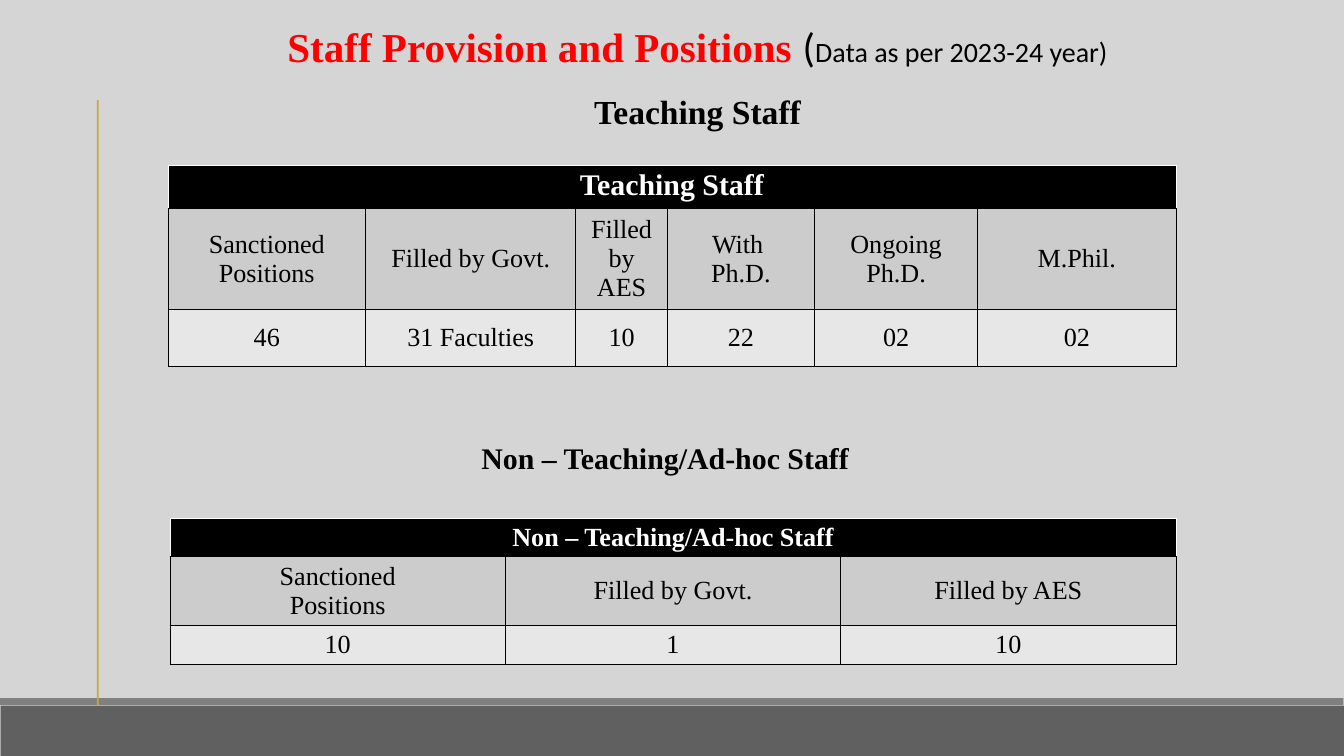
import pptx
import pptx.dml.color
import pptx.enum.shapes
import pptx.enum.text
import pptx.oxml
import pptx.oxml.ns
import pptx.util

Inches = pptx.util.Inches
Pt = pptx.util.Pt
ANCHOR = pptx.enum.text.MSO_ANCHOR

THEME = {
    "serif": "Times New Roman", "sans": "Calibri",
    "background": "D5D5D5", "floor": "606060", "floor_edge": "808080", "accent": "CDA63C",
    "title": "FF0000", "text": "000000", "inverse": "FFFFFF",
    "header": "000000", "label": "CCCCCC", "value": "E7E7E7",
    "title_size": 44, "note_size": 30, "heading_size": 36,
    "subheading_size": 32, "cell_size": 28,
}

BARS = [
    ((0.01, 10.5, 19.99, 0.75), "floor"),
    ((0, 10.39, 19.99, 0.1), "floor_edge"),
    ((1.44, 1.49, 0.03, 9), "accent"),
]

HEADINGS = [
    {"box": (3.67, 0.18, 13.42, 1.02), "anchor": ANCHOR.MIDDLE, "runs": [
        ("Staff Provision and Positions ", {"size": "title_size", "color": "title", "bold": True}),
        ("(", {"size": "title_size", "font": "sans"}),
        ("Data as per 2023-24 year)", {"size": "note_size", "font": "sans"}),
    ]},
    {"box": (5.67, 1.31, 9.42, 1.01), "anchor": ANCHOR.TOP, "runs": [
        ("Teaching Staff", {"size": "heading_size", "bold": True}),
    ]},
    {"box": (7.04, 6.49, 5.72, 0.64), "anchor": ANCHOR.TOP, "wrap": False, "runs": [
        ("Non – Teaching/Ad-hoc Staff", {"size": "subheading_size", "bold": True}),
    ]},
]

TABLES = [
    {
        "position": (2.5, 2.46),
        "columns": [2.94, 3.13, 1.36, 2.19, 2.43, 2.95],
        "rows": [0.64, 1.5, 0.85],
        "title": "Teaching Staff",
        "title_size": "subheading_size",
        "title_anchor": ANCHOR.TOP,
        "labels": ["Sanctioned Positions", "Filled by Govt.", "Filled by AES",
                   "With \vPh.D.", "Ongoing Ph.D.", "M.Phil."],
        "values": ["46", "31 Faculties", "10", "22", "02", "02"],
    },
    {
        "position": (2.53, 7.71),
        "columns": [4.99] * 3,
        "rows": [0.57, 1.03, 0.57],
        "title": "Non – Teaching/Ad-hoc Staff",
        "title_size": "cell_size",
        "title_anchor": ANCHOR.MIDDLE,
        "labels": ["Sanctioned\nPositions", "Filled by Govt.", "Filled by AES"],
        "values": ["10", "1", "10"],
    },
]


def color_of(name):
    return pptx.dml.color.RGBColor.from_string(THEME[name])


def fill_solid(fill, color):
    fill.solid()
    fill.fore_color.rgb = color_of(color)


def add_text(paragraph, text, size="cell_size", font="serif", color="text", bold=False):
    """Append a formatted run; a vertical tab in the text becomes a line break."""
    paragraph.alignment = pptx.enum.text.PP_ALIGN.CENTER
    for index, line in enumerate(text.split("\v")):
        if index:
            paragraph.add_line_break()
        run = paragraph.add_run()
        run.text = line
        run.font.name = THEME[font]
        run.font.size = Pt(THEME[size])
        run.font.bold = bold
        run.font.color.rgb = color_of(color)


def add_bar(slide, box, color):
    shape = slide.shapes.add_shape(
        pptx.enum.shapes.MSO_SHAPE.RECTANGLE, *map(Inches, box))
    shape.shadow.inherit = False
    fill_solid(shape.fill, color)
    shape.line.fill.background()


def add_heading(slide, box, runs, anchor, wrap=True):
    frame = slide.shapes.add_textbox(*map(Inches, box)).text_frame
    frame.word_wrap = wrap
    frame.vertical_anchor = anchor
    for text, style in runs:
        add_text(frame.paragraphs[0], text, **style)


def set_borders(cell, colors):
    """Give the cell 1 pt borders, coloured in left, right, top, bottom order."""
    properties = cell._tc.get_or_add_tcPr()
    for index, (side, color) in enumerate(zip("LRTB", colors)):
        properties.insert(index, pptx.oxml.parse_xml(
            f'<a:ln{side} {pptx.oxml.ns.nsdecls("a")} w="12700"><a:solidFill>'
            f'<a:srgbClr val="{THEME[color]}"/></a:solidFill></a:ln{side}>'))


def fill_cell(cell, text, fill, anchor=ANCHOR.MIDDLE, **style):
    cell.vertical_anchor = anchor
    fill_solid(cell.fill, fill)
    for index, line in enumerate(text.split("\n")):
        frame = cell.text_frame
        paragraph = frame.add_paragraph() if index else frame.paragraphs[0]
        add_text(paragraph, line, **style)


def add_staff_table(slide, content):
    columns, rows = content["columns"], content["rows"]
    table = slide.shapes.add_table(
        len(rows), len(columns), *map(Inches, content["position"]),
        Inches(sum(columns)), Inches(sum(rows))).table
    for column, width in zip(table.columns, columns):
        column.width = Inches(width)
    for row, height in zip(table.rows, rows):
        row.height = Inches(height)

    header = table.cell(0, 0)
    header.merge(table.cell(0, len(columns) - 1))
    fill_cell(header, content["title"], "header", content["title_anchor"],
              size=content["title_size"], color="inverse", bold=True)
    for cell in table.rows[0].cells:
        set_borders(cell, ["inverse", "inverse", "inverse", "text"])

    for row_index, kind in enumerate(("label", "value"), start=1):
        for column_index, text in enumerate(content[kind + "s"]):
            cell = table.cell(row_index, column_index)
            fill_cell(cell, text, kind)
            set_borders(cell, ["text"] * 4)


def main():
    presentation = pptx.Presentation()
    presentation.slide_width = Inches(20)
    presentation.slide_height = Inches(11.25)
    slide = presentation.slides.add_slide(presentation.slide_layouts[6])
    fill_solid(slide.background.fill, "background")
    for box, color in BARS:
        add_bar(slide, box, color)
    for heading in HEADINGS:
        add_heading(slide, **heading)
    for content in TABLES:
        add_staff_table(slide, content)
    presentation.save("out.pptx")


if __name__ == "__main__":
    main()
